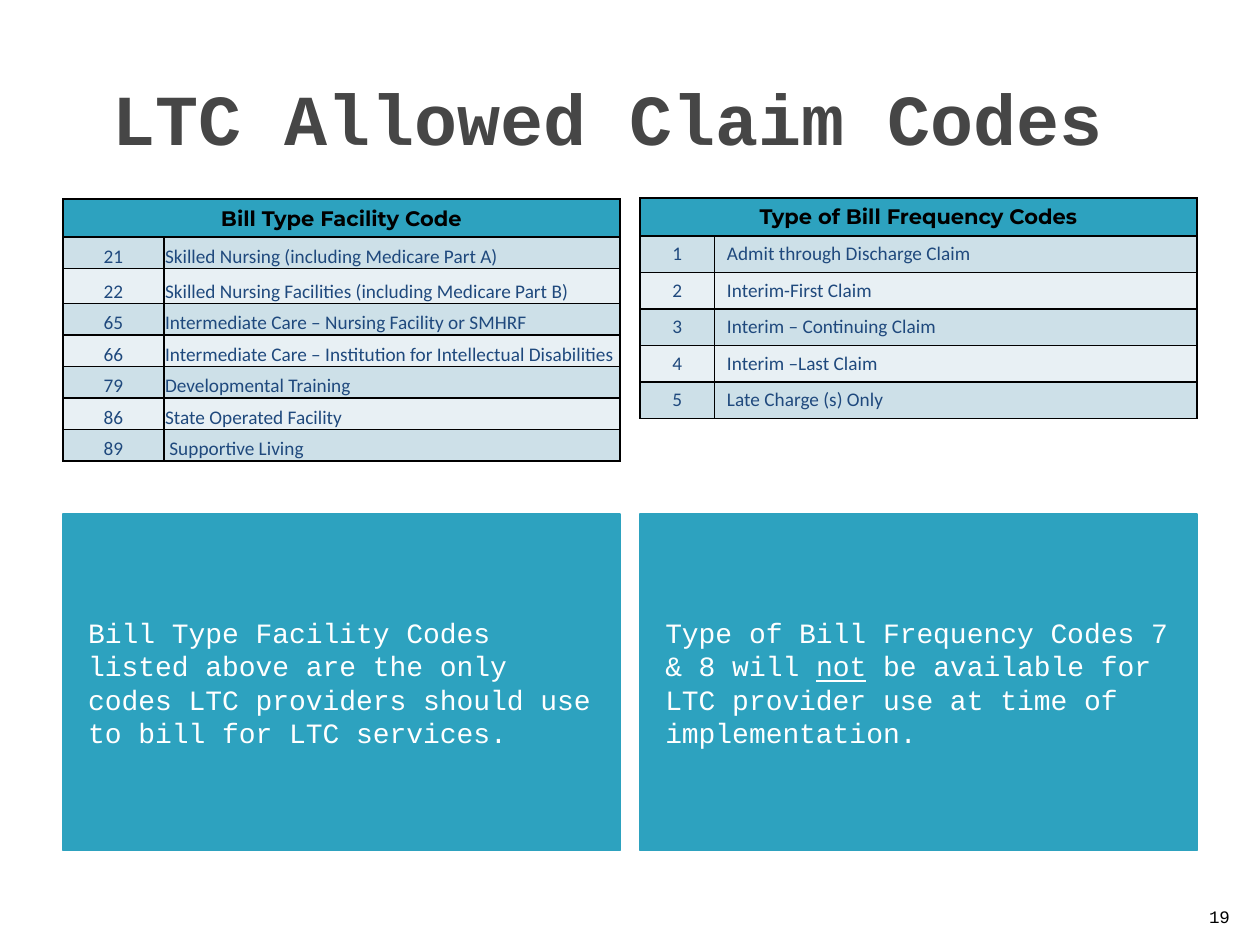
import pptx
import pptx.util
import pptx.dml.color
import pptx.enum.shapes
import pptx.enum.text
import pptx.oxml
import pptx.oxml.ns

Inches, Pt = pptx.util.Inches, pptx.util.Pt
ALIGN, ANCHOR = pptx.enum.text.PP_ALIGN, pptx.enum.text.MSO_ANCHOR

# Content
TITLE = "LTC Allowed Claim Codes "
PAGE_NUMBER = "19"
FACILITY_TABLE = {
    "heading": "Bill Type Facility Code",
    "rows": [
        ("21", "Skilled Nursing (including Medicare Part A)"),
        ("22", "Skilled Nursing Facilities (including Medicare Part B)"),
        ("65", "Intermediate Care – Nursing Facility or SMHRF"),
        ("66", "Intermediate Care – Institution for Intellectual Disabilities"),
        ("79", "Developmental Training"),
        ("86", "State Operated Facility"),
        ("89", " Supportive Living"),
    ],
    "top": 1.58,
    "code_width": 0.8,
    "heights": [0.3, 0.25, 0.28] + [0.25] * 5,
    "margins": (0.01, 0.01, 0.01, 0),
    "anchor": ANCHOR.BOTTOM,
}
FREQUENCY_TABLE = {
    "heading": "Type of Bill Frequency Codes",
    "rows": [
        ("1", "Admit through Discharge Claim"),
        ("2", "Interim-First Claim"),
        ("3", "Interim – Continuing Claim"),
        ("4", "Interim –Last Claim"),
        ("5", "Late Charge (s) Only"),
    ],
    "top": 1.57,
    "code_width": 0.59,
    "heights": [0.3] + [0.29] * 5,
    "margins": (0.1, 0.05, 0.1, 0.05),
    "anchor": ANCHOR.TOP,
}
# Each note is a list of (text, underlined) runs
FACILITY_NOTE = [("Bill Type Facility Codes listed above are the only codes "
                  "LTC providers should use to bill for LTC services.", False)]
FREQUENCY_NOTE = [
    ("Type of Bill Frequency Codes 7 & 8 will ", False),
    ("not", True),
    (" be available for LTC provider use at time of implementation.", False),
]
COLUMNS = [(FACILITY_TABLE, FACILITY_NOTE), (FREQUENCY_TABLE, FREQUENCY_NOTE)]

# Layout and colours
SLIDE_WIDTH, SLIDE_HEIGHT = 10, 7.5
MARGIN, GUTTER = 0.5, 0.16
COLUMN_WIDTH = (SLIDE_WIDTH - 2 * MARGIN - GUTTER) / 2
NOTE_TOP, NOTE_HEIGHT = 4.08, 2.67
TEAL, BLACK, WHITE, NAVY, GREY = "2DA2BF", "000000", "FFFFFF", "1F497D", "464646"
BANDS = ("CDE0E8", "E8F0F4")


def color(value):
    return pptx.dml.color.RGBColor.from_string(value)


def fill(target, value):
    target.fill.solid()
    target.fill.fore_color.rgb = color(value)


def add_run(paragraph, text, font, size, value, bold=False, underline=False):
    run = paragraph.add_run()
    run.text = text
    run.font.name, run.font.size = font, Pt(size)
    run.font.bold, run.font.underline = bold, underline
    run.font.color.rgb = color(value)


def set_margins(target, margins):
    (target.margin_left, target.margin_top,
     target.margin_right, target.margin_bottom) = map(Inches, margins)


def add_borders(cell):
    properties = cell._tc.get_or_add_tcPr()
    for index, side in enumerate(("lnL", "lnR", "lnT", "lnB")):
        properties.insert(index, pptx.oxml.parse_xml(
            f'<a:{side} {pptx.oxml.ns.nsdecls("a")} w="{Pt(1)}"><a:solidFill>'
            f'<a:srgbClr val="{BLACK}"/></a:solidFill></a:{side}>'))


def add_code_table(slide, left, data):
    rows = [(data["heading"], "")] + data["rows"]
    table = slide.shapes.add_table(
        len(rows), 2, Inches(left), Inches(data["top"]),
        Inches(COLUMN_WIDTH), Inches(sum(data["heights"]))).table
    table.columns[0].width = Inches(data["code_width"])
    table.columns[1].width = Inches(COLUMN_WIDTH - data["code_width"])
    table.cell(0, 0).merge(table.cell(0, 1))
    for row, texts in enumerate(rows):
        table.rows[row].height = Inches(data["heights"][row])
        is_heading = row == 0
        for column, text in enumerate(texts):
            cell = table.cell(row, column)
            fill(cell, TEAL if is_heading else BANDS[(row - 1) % 2])
            add_borders(cell)
            set_margins(cell, data["margins"])
            cell.vertical_anchor = data["anchor"]
            if is_heading and data["anchor"] == ANCHOR.BOTTOM:
                cell.vertical_anchor = ANCHOR.MIDDLE
            if not text:
                continue
            paragraph = cell.text_frame.paragraphs[0]
            paragraph.alignment = ALIGN.LEFT if column else ALIGN.CENTER
            if is_heading:
                add_run(paragraph, text, "Montserrat", 12, BLACK, bold=True)
            else:
                add_run(paragraph, text, "Calibri", 11, NAVY)


def add_note(slide, left, runs):
    shape = slide.shapes.add_shape(
        pptx.enum.shapes.MSO_SHAPE.RECTANGLE, Inches(left), Inches(NOTE_TOP),
        Inches(COLUMN_WIDTH), Inches(NOTE_HEIGHT))
    shape.shadow.inherit = False
    fill(shape, TEAL)
    shape.line.color.rgb = color(TEAL)
    shape.line.width = Pt(0.75)
    frame = shape.text_frame
    frame.word_wrap = True
    frame.vertical_anchor = ANCHOR.MIDDLE
    set_margins(frame, (0.2, 0.05, 0.1, 0.05))
    paragraph = frame.paragraphs[0]
    paragraph.alignment = ALIGN.LEFT
    for text, underline in runs:
        add_run(paragraph, text, "Courier New", 16, WHITE, underline=underline)


def main():
    presentation = pptx.Presentation()
    presentation.slide_width = Inches(SLIDE_WIDTH)
    presentation.slide_height = Inches(SLIDE_HEIGHT)
    slide = presentation.slides.add_slide(presentation.slide_layouts[5])

    # Title
    title = slide.shapes.title
    title.left, title.top = Inches(MARGIN), Inches(0.3)
    title.width, title.height = Inches(SLIDE_WIDTH - 2 * MARGIN), Inches(1.25)
    title.text_frame.vertical_anchor = ANCHOR.MIDDLE
    paragraph = title.text_frame.paragraphs[0]
    paragraph.alignment = ALIGN.CENTER
    add_run(paragraph, TITLE, "Courier New", 41, GREY, bold=True)

    # Two columns: code table above, note below
    for index, (table_data, note_runs) in enumerate(COLUMNS):
        left = MARGIN + index * (COLUMN_WIDTH + GUTTER)
        add_note(slide, left, note_runs)
        add_code_table(slide, left, table_data)

    # Page number
    number = slide.shapes.add_textbox(
        Inches(9.46), Inches(7.01), Inches(0.4), Inches(0.4))
    number.text_frame.word_wrap = True
    number.text_frame.vertical_anchor = ANCHOR.BOTTOM
    paragraph = number.text_frame.paragraphs[0]
    paragraph.alignment = ALIGN.RIGHT
    add_run(paragraph, PAGE_NUMBER, "Courier New", 10, BLACK)

    presentation.save("out.pptx")


if __name__ == "__main__":
    main()
